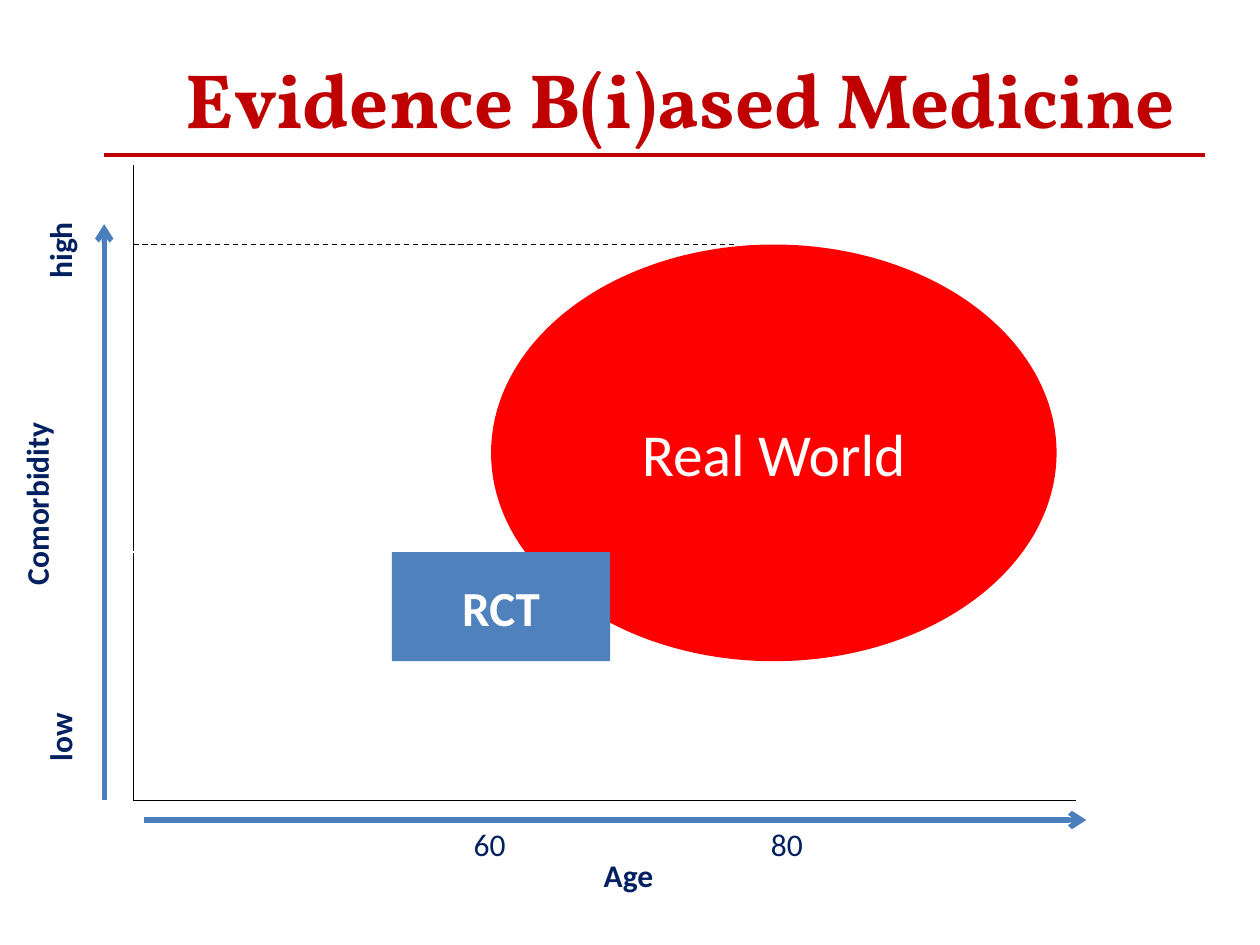
from dataclasses import dataclass

from lxml.etree import SubElement
from pptx import Presentation
from pptx.dml.color import RGBColor
from pptx.enum.dml import MSO_LINE
from pptx.enum.shapes import MSO_CONNECTOR, MSO_SHAPE
from pptx.enum.text import MSO_ANCHOR, PP_ALIGN
from pptx.oxml.ns import qn
from pptx.util import Cm, Pt


@dataclass(frozen=True)
class Theme:
    title_color: str = "C00000"
    label_color: str = "002060"
    world_color: str = "FF0000"
    trial_color: str = "4F81BD"
    arrow_color: str = "4B7EBC"
    axis_color: str = "000000"
    white: str = "FFFFFF"
    title_font: str = "Vollkorn"
    body_font: str = "Calibri"
    title_size: int = 44
    world_size: int = 34
    trial_size: int = 28
    label_size: int = 18
    thin: float = 0.75
    rule: float = 2
    thick: float = 3


THEME = Theme()


@dataclass(frozen=True)
class Box:
    """A region in centimetres."""
    left: float
    top: float
    width: float
    height: float

    def inside(self, left, top, width, height):
        return Box(self.left + left, self.top + top, width, height)

    def lengths(self):
        return Cm(self.left), Cm(self.top), Cm(self.width), Cm(self.height)


def write(shape, text, size, color, bold=False, font=THEME.body_font, align=PP_ALIGN.LEFT):
    shape.text_frame.text = text
    paragraph = shape.text_frame.paragraphs[0]
    paragraph.alignment = align
    run_font = paragraph.runs[0].font
    run_font.name, run_font.size, run_font.bold = font, Pt(size), bold
    run_font.color.rgb = RGBColor.from_string(color)


def add_text(slide, box, text, size=THEME.label_size, color=THEME.label_color,
             rotation=0, wrap=True, **style):
    shape = slide.shapes.add_textbox(*box.lengths())
    shape.rotation = rotation
    shape.text_frame.word_wrap = wrap
    write(shape, text, size, color, **style)


def add_area(slide, kind, box, fill, text, size, bold=False):
    shape = slide.shapes.add_shape(kind, *box.lengths())
    shape.shadow.inherit = False
    shape.fill.solid()
    shape.fill.fore_color.rgb = RGBColor.from_string(fill)
    shape.line.fill.background()
    shape.text_frame.word_wrap = False
    shape.text_frame.vertical_anchor = MSO_ANCHOR.MIDDLE
    write(shape, text, size, THEME.white, bold, align=PP_ALIGN.CENTER)


def add_line(slide, box, start, end, color, width, dash=None, arrow=False):
    """Draw a line between two points given relative to the box."""
    points = [Cm(value) for x, y in (start, end) for value in (box.left + x, box.top + y)]
    connector = slide.shapes.add_connector(MSO_CONNECTOR.STRAIGHT, *points)
    connector.line.color.rgb = RGBColor.from_string(color)
    connector.line.width = Pt(width)
    if dash:
        connector.line.dash_style = dash
    if arrow:
        SubElement(connector.line._get_or_add_ln(), qn("a:tailEnd"), type="arrow")
    SubElement(connector._element.spPr, qn("a:effectLst"))


def add_title(slide, box):
    add_text(slide, box.inside(1.4, 0, 21.8, 2.13), "Evidence B(i)ased Medicine",
             THEME.title_size, THEME.title_color, bold=True, font=THEME.title_font)
    add_line(slide, box, (0, box.height), (box.width, box.height),
             THEME.title_color, THEME.rule)


def add_plot(slide, box):
    # Populations
    add_area(slide, MSO_SHAPE.OVAL, box.inside(7.21, 1.6, 11.4, 8.4),
             THEME.world_color, "Real World", THEME.world_size)
    add_area(slide, MSO_SHAPE.RECTANGLE, box.inside(5.21, 7.8, 4.4, 2.2),
             THEME.trial_color, "RCT", THEME.trial_size, bold=True)

    # Axes from the origin, then comorbidity guides
    for end in ((box.width, box.height), (0, 0)):
        add_line(slide, box, (0, box.height), end, THEME.axis_color, THEME.thin)
    for x, y, color in ((5.21, 7.8, THEME.white), (12.19, 1.6, THEME.axis_color)):
        add_line(slide, box, (0, y), (x, y), color, THEME.thin, MSO_LINE.DASH)


def add_comorbidity_scale(slide, box):
    add_line(slide, box, (box.width, box.height), (box.width, 0),
             THEME.arrow_color, THEME.thick, arrow=True)
    add_text(slide, box.inside(-2.29, 3.74, 6.3, 1.27), "Comorbidity", rotation=270, bold=True)
    for text, left, top, width in (("low", 0.46, 9.81, 1.5), ("high", 0.38, 0.01, 1.65)):
        add_text(slide, box.inside(left, top, width, 1.02), text,
                 rotation=270, wrap=False, bold=True)


def add_age_scale(slide, box):
    add_line(slide, box, (0, 0), (box.width, 0), THEME.arrow_color, THEME.thick, arrow=True)
    for text, left in (("60", 6.4), ("80", 12.39)):
        add_text(slide, box.inside(left, -0.02, 1.6, 1.02), text)
    add_text(slide, box.inside(6.62, 0.6, 6.3, 1.27), "Age", bold=True,
             align=PP_ALIGN.CENTER)


def main():
    presentation = Presentation()
    presentation.slide_width, presentation.slide_height = Cm(25.4), Cm(19.05)
    slide = presentation.slides.add_slide(presentation.slide_layouts[6])
    add_plot(slide, Box(2.69, 3.33, 19, 12.8))
    add_comorbidity_scale(slide, Box(0, 4.52, 2.1, 11.6))
    add_age_scale(slide, Box(2.9, 16.53, 19, 1.85))
    add_title(slide, Box(2.1, 0.92, 22.2, 2.2))
    presentation.save("out.pptx")


if __name__ == "__main__":
    main()
